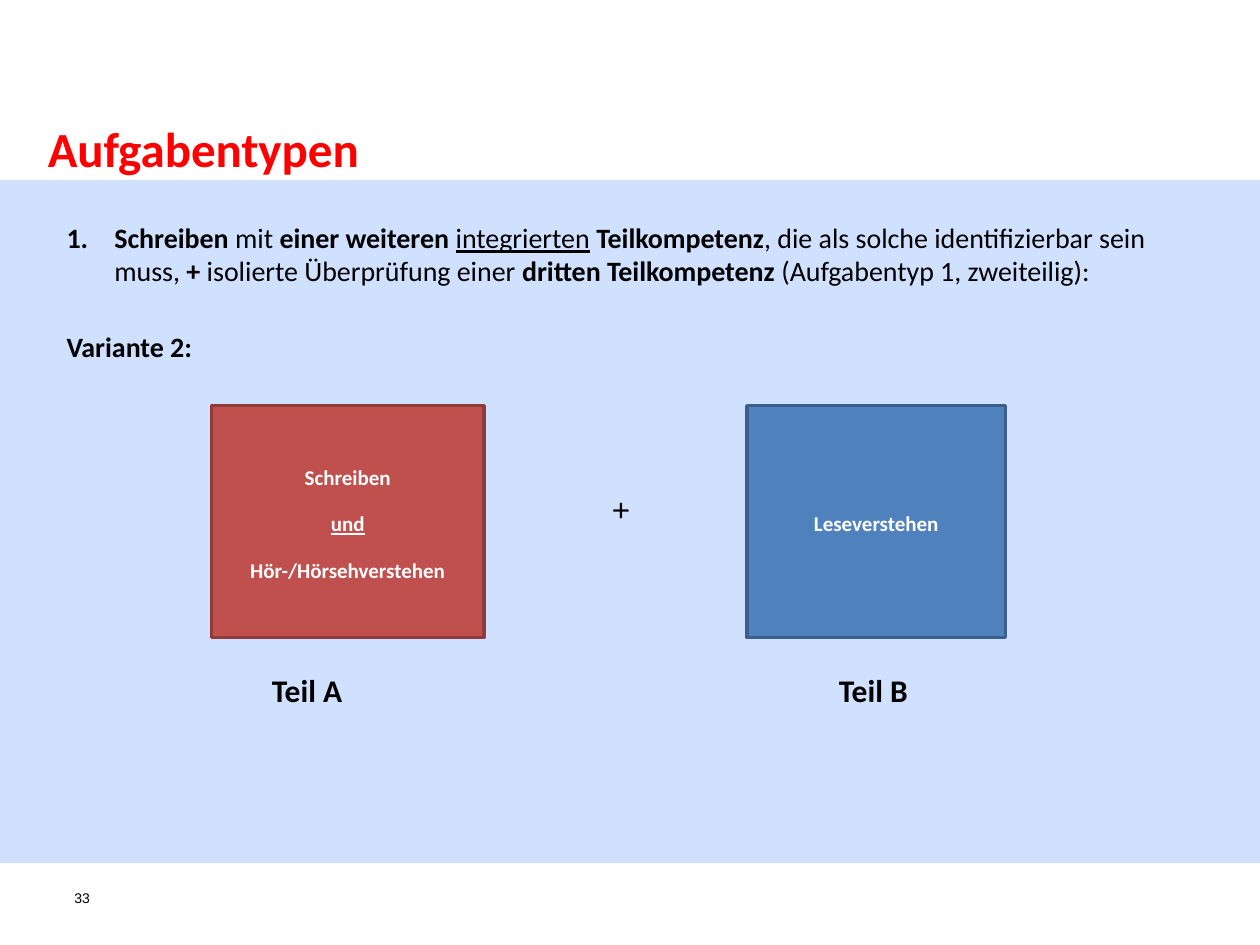
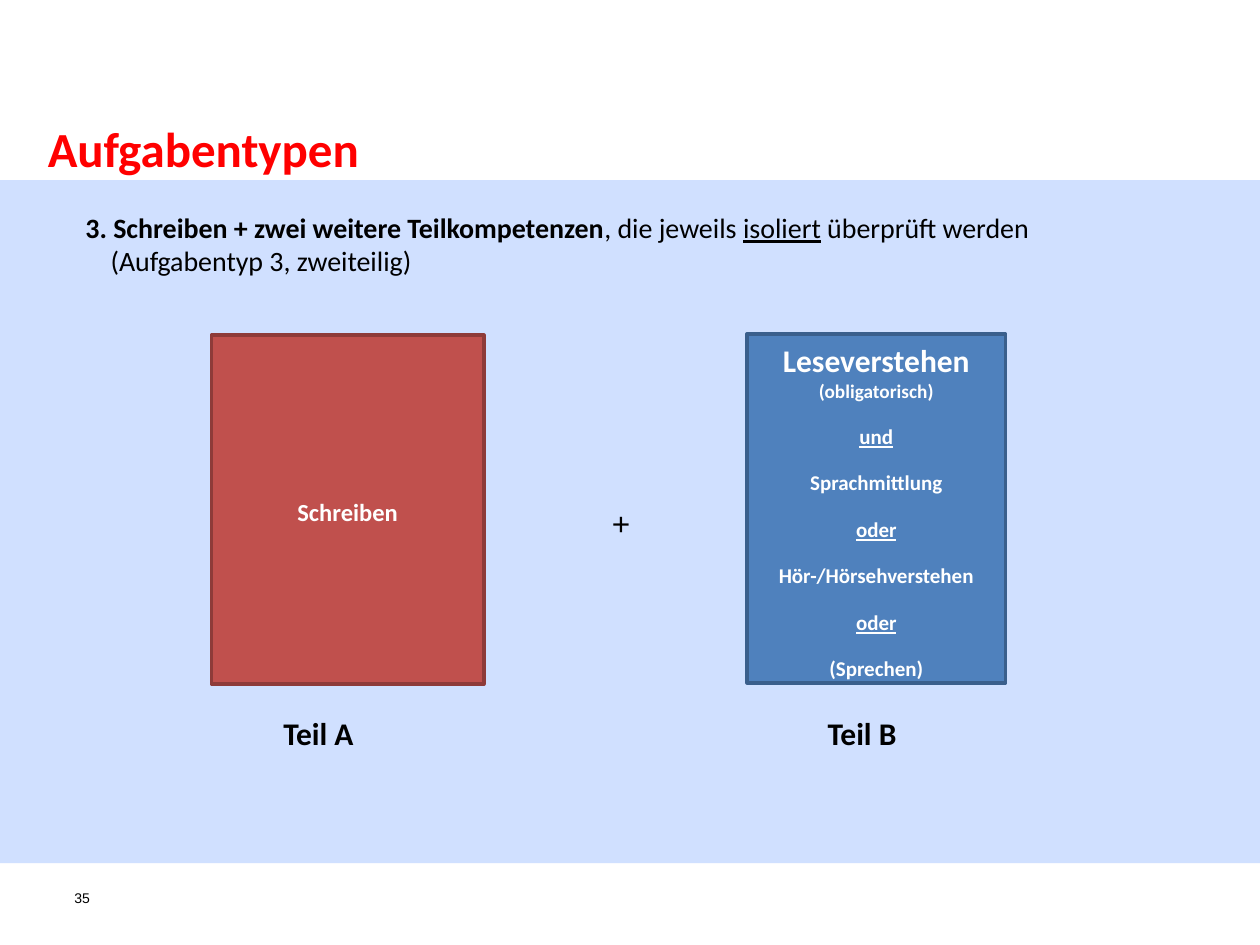
from lxml import etree
from pptx import Presentation
from pptx.dml.color import RGBColor
from pptx.enum.shapes import MSO_SHAPE
from pptx.enum.text import MSO_ANCHOR, PP_ALIGN
from pptx.oxml.ns import qn
from pptx.util import Inches, Pt

RECT, PROCESS = MSO_SHAPE.RECTANGLE, MSO_SHAPE.FLOWCHART_PROCESS
LEFT, CENTER = PP_ALIGN.LEFT, PP_ALIGN.CENTER
MIDDLE = MSO_ANCHOR.MIDDLE

COLORS = {
    "band": "6699FF", "title": "FF0000", "text": "000000", "white": "FFFFFF",
    "part_a": "C0504D", "part_a_line": "8E3B39",
    "part_b": "4F81BD", "part_b_line": "3A5F8C",
}
BOX_STYLE = dict(size=12, color="white", align=CENTER, spacing=1.15, after=10)


def rgb(name):
    return RGBColor.from_string(COLORS[name])


def add_text(tf, runs, size=16, color="text", font="Calibri", align=LEFT, spacing=None,
             before=None, after=None, margin=0, indent=0, numbered=False, tabs=()):
    """Append a paragraph; each run is (text, flags) with flags from b (bold) and u (underline)."""
    p = tf.paragraphs[0]
    if p.runs:
        p = tf.add_paragraph()
    p.alignment = align
    if spacing:
        p.line_spacing = spacing
    if before:
        p.space_before = Pt(before)
    if after:
        p.space_after = Pt(after)
    pPr = p._p.get_or_add_pPr()
    if margin:
        pPr.set("marL", str(Inches(margin)))
        pPr.set("indent", str(Inches(indent)))
    if numbered:
        etree.SubElement(pPr, qn("a:buFont"), typeface="+mj-lt")
        etree.SubElement(pPr, qn("a:buAutoNum"), type="arabicPeriod")
    if tabs:
        tab_list = etree.SubElement(pPr, qn("a:tabLst"))
        for pos in tabs:
            etree.SubElement(tab_list, qn("a:tab"), pos=str(Inches(pos)), algn="l")
    for text, flags in runs:
        r = p.add_run()
        r.text = text
        r.font.name, r.font.size = font, Pt(size)
        r.font.bold, r.font.underline = "b" in flags, "u" in flags
        r.font.color.rgb = rgb(color)


class Deck:
    def __init__(self):
        self.prs = Presentation()
        self.prs.slide_width, self.prs.slide_height = Inches(10), Inches(7.5)
        self.s = None

    def slide(self, title, number):
        """Start a slide with the shared band, page number and title."""
        self.s = self.prs.slides.add_slide(self.prs.slide_layouts[6])
        band = self.shape(RECT, 0, 1.43, 10, 5.42, "band")
        color = band._element.spPr.find(qn("a:solidFill"))[0]
        etree.SubElement(color, qn("a:alpha"), val="30000")
        add_text(self.textbox(0.59, 7.06, 0.32, 0.37, (0, 0)), [(number, "")], size=8, font="Arial")
        add_text(self.textbox(0.38, 0.78, 8.82, 0.61, (0, 0.16)), [(title, "b")],
                 size=28, color="title")

    def shape(self, kind, x, y, w, h, fill, line=None):
        sp = self.s.shapes.add_shape(kind, Inches(x), Inches(y), Inches(w), Inches(h))
        sp.shadow.inherit = False
        sp.fill.solid()
        sp.fill.fore_color.rgb = rgb(fill)
        if line:
            sp.line.color.rgb, sp.line.width = rgb(line), Pt(2)
        else:
            sp.line.fill.background()
        return sp

    def textbox(self, x, y, w, h, insets=(0.1, 0.05)):
        """Add a wrapping text box; insets are (left and right, top)."""
        tf = self.s.shapes.add_textbox(Inches(x), Inches(y), Inches(w), Inches(h)).text_frame
        tf.word_wrap = True
        tf.margin_left = tf.margin_right = Inches(insets[0])
        tf.margin_top = Inches(insets[1])
        return tf

    def task_box(self, name, x, y, w, h, lines):
        """Add a task box; each line is (text, flags, format changes)."""
        tf = self.shape(PROCESS, x, y, w, h, name, name + "_line").text_frame
        tf.word_wrap, tf.vertical_anchor = True, MIDDLE
        for text, flags, changes in lines:
            add_text(tf, [(text, flags)], **{**BOX_STYLE, **changes})

    def task_pair(self, top_a, top_b, height, lines_a, lines_b, plus_top):
        self.task_box("part_a", 1.68, top_a, 2.16, height, lines_a)
        self.task_box("part_b", 5.93, top_b, 2.05, height, lines_b)
        add_text(self.textbox(4.59, plus_top, 0.68, 0.4), [("+", "")],
                 size=18, font="Arial", align=CENTER)

    def task_labels(self, x, y, tabs):
        add_text(self.textbox(x, y, 7.36, 0.41), [("\tTeil A\tTeil B", "b")], size=18, tabs=tabs)


def main():
    deck = Deck()

    deck.slide("Aufgabentypen", "33")
    tf = deck.textbox(0.43, 1.7, 9.14, 1.24)
    add_text(tf, [
        ("Schreiben", "b"), (" mit ", ""), ("einer weiteren ", "b"), ("integrierten", "u"),
        (" Teilkompetenz", "b"), (", die als solche identifizierbar sein muss,", ""),
        (" + ", "b"), ("isolierte Überprüfung einer ", ""), ("dritten Teilkompetenz", "b"),
        (" (Aufgabentyp 1, zweiteilig):", ""),
    ], after=24, margin=0.38, indent=-0.38, numbered=True)
    add_text(tf, [("Variante 2:", "b")], after=24)
    deck.task_pair(3.22, 3.22, 1.84,
                   [("Schreiben", "b", {}), ("und", "bu", {}), ("Hör-/Hörsehverstehen", "b", {})],
                   [("Leseverstehen", "b", {})], plus_top=3.84)
    deck.task_labels(1.11, 5.28, (0.95, 5.45))

    deck.slide("Aufgabentypen", "35")
    tf = deck.textbox(0.58, 1.62, 9.14, 0.64)
    add_text(tf, [("3. Schreiben + zwei weitere Teilkompetenzen", "b"), (", die jeweils ", ""),
                  ("isoliert", "u"), (" überprüft werden", "")])
    add_text(tf, [("(Aufgabentyp 3, zweiteilig)", "")], margin=0.2)
    deck.task_pair(2.66, 2.65, 2.77, [("Schreiben", "b", dict(size=14))], [
        ("Leseverstehen", "b", dict(size=18, after=0)),
        ("(obligatorisch)", "b", dict(size=11, spacing=1, after=0)),
        ("und", "bu", dict(before=10)),
        ("Sprachmittlung", "b", {}),
        ("oder", "bu", {}),
        ("Hör-/Hörsehverstehen", "b", {}),
        ("oder", "bu", {}),
        ("(Sprechen)", "b", {}),
    ], plus_top=3.95)
    deck.task_labels(0.97, 5.62, (1.18, 5.5))

    deck.prs.save("out.pptx")


if __name__ == "__main__":
    main()
